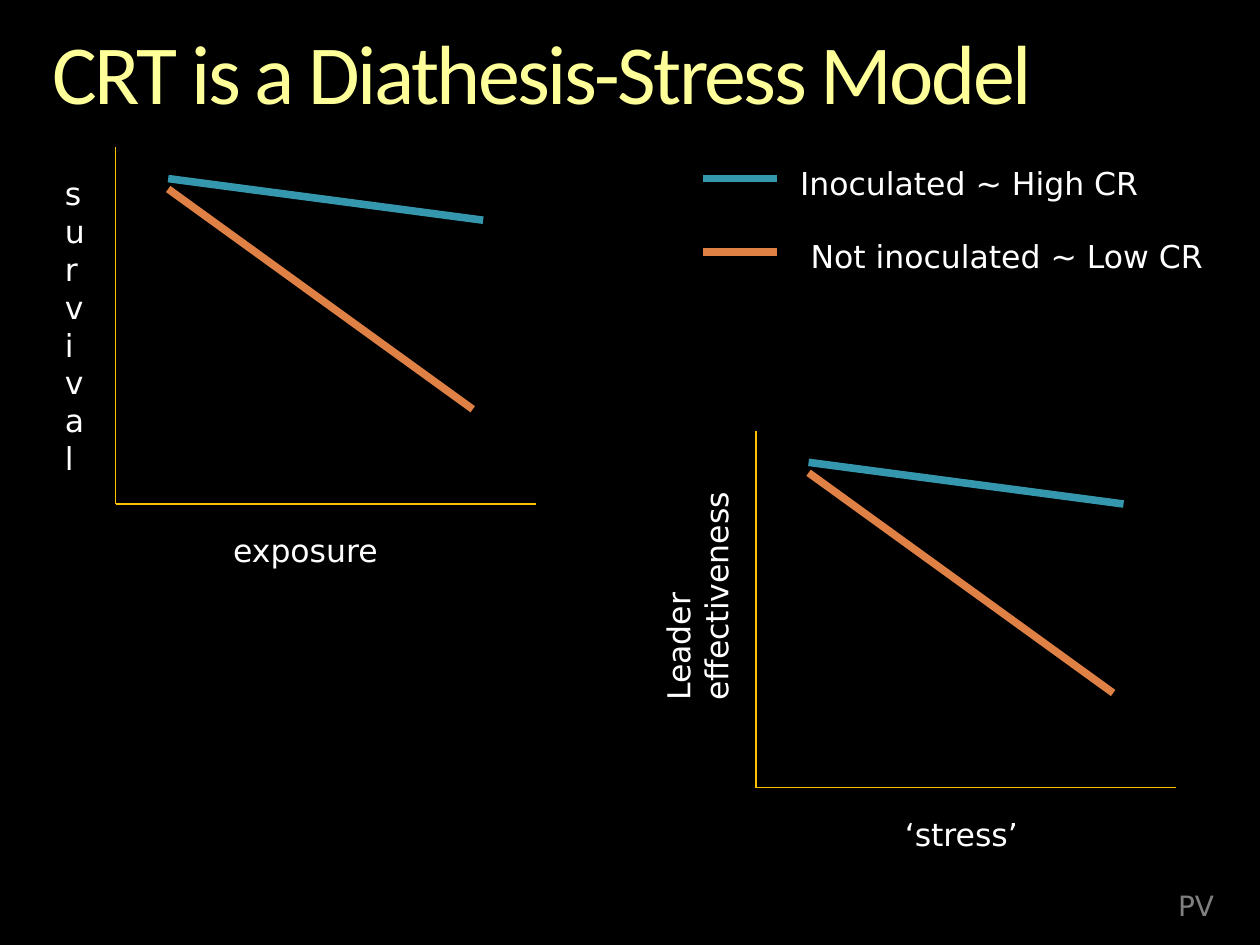
"""Build the diathesis-stress slide: two line plots that share one legend."""
from lxml.etree import SubElement
from pptx import Presentation
from pptx.dml.color import RGBColor
from pptx.enum.shapes import MSO_CONNECTOR as Connector
from pptx.enum.text import MSO_AUTO_SIZE as AutoSize
from pptx.oxml.ns import qn
from pptx.util import Cm, Pt

BLACK = RGBColor(0x00, 0x00, 0x00)
WHITE = RGBColor(0xFF, 0xFF, 0xFF)
GREY = RGBColor(0x80, 0x80, 0x80)
YELLOW = RGBColor(0xFF, 0xFF, 0x99)
GOLD = RGBColor(0xFF, 0xC0, 0x00)
TEAL = RGBColor(0x34, 0x97, 0xAE)
ORANGE = RGBColor(0xDF, 0x80, 0x45)

TITLE = "CRT is a Diathesis-Stress Model"
PLOT_CORNERS = [(2.33, 2.96), (15.24, 8.68)]
PLOT_LINES = [
    ((0, 0), (0, 7.2), GOLD, 0.75),
    ((0, 7.2), (8.47, 7.2), GOLD, 0.75),
    ((1.06, 0.64), (7.41, 1.48), TEAL, 4.33),
    ((1.06, 0.85), (7.2, 5.29), ORANGE, 4.33),
]
LEGEND = [
    ("Inoculated ~ High CR", (15.88, 3.18, 7.62, 1.02), 3.6, TEAL),
    ("Not inoculated ~ Low CR", (16.09, 4.66, 8.68, 1.02), 5.08, ORANGE),
]
LEGEND_LEFT, LEGEND_RIGHT = 14.18, 15.66
AXIS_LABELS = [
    ("survival", (1.06, 3.39, 0.64, 6.4), None),
    ("exposure", (4.45, 10.58, 4.02, 1.02), None),
    ("Leader effectiveness", (13.16, 9.4, 2.06, 4.98), "vert270"),
    ("‘stress’", (17.99, 16.3, 3.39, 1.02), None),
]


def add_text(slide, text, box, font="DejaVu Sans", size=18, color=WHITE,
             inset=None, line_spacing=None, tracking=None, direction=None):
    """Add a wrapped text box with one formatted paragraph."""
    shape = slide.shapes.add_textbox(*map(Cm, box))
    frame = shape.text_frame
    frame.word_wrap = True
    frame.auto_size = AutoSize.SHAPE_TO_FIT_TEXT
    if inset is not None:
        frame.margin_left = frame.margin_right = Cm(inset)
        frame.margin_top = frame.margin_bottom = Cm(inset)
    if direction:
        frame._txBody.bodyPr.set("vert", direction)
    paragraph = frame.paragraphs[0]
    if line_spacing:
        paragraph.line_spacing = line_spacing
    run = paragraph.add_run()
    run.text = text
    run.font.name = font
    run.font.size = Pt(size)
    run.font.color.rgb = color
    if tracking:
        run._r.get_or_add_rPr().set("spc", str(round(tracking * 100)))


def add_line(slide, start, end, color, width):
    """Add a straight line without a shadow."""
    connector = slide.shapes.add_connector(
        Connector.STRAIGHT, *map(Cm, (*start, *end)))
    connector.line.color.rgb = color
    connector.line.width = Pt(width)
    SubElement(connector._element.spPr, qn("a:effectLst"))


def main():
    """Build and save the slide."""
    presentation = Presentation()
    presentation.slide_width, presentation.slide_height = Cm(25.4), Cm(19.05)
    slide = presentation.slides.add_slide(presentation.slide_layouts[6])
    slide.background.fill.solid()
    slide.background.fill.fore_color.rgb = BLACK

    add_text(slide, "PV", (23.5, 17.78, 1.47, 0.94), size=16, color=GREY)
    add_text(slide, TITLE, (1.06, 0.64, 23.29, 1.85), font="Calibri", size=48,
             color=YELLOW, inset=0, line_spacing=0.9, tracking=-1.5)
    for left, top in PLOT_CORNERS:
        for (x1, y1), (x2, y2), color, width in PLOT_LINES:
            add_line(slide, (left + x1, top + y1), (left + x2, top + y2),
                     color, width)
    for text, box, direction in AXIS_LABELS:
        add_text(slide, text, box, direction=direction)
    for text, box, y, color in LEGEND:
        add_line(slide, (LEGEND_LEFT, y), (LEGEND_RIGHT, y), color, 4.33)
        add_text(slide, text, box)
    presentation.save("out.pptx")


if __name__ == "__main__":
    main()
